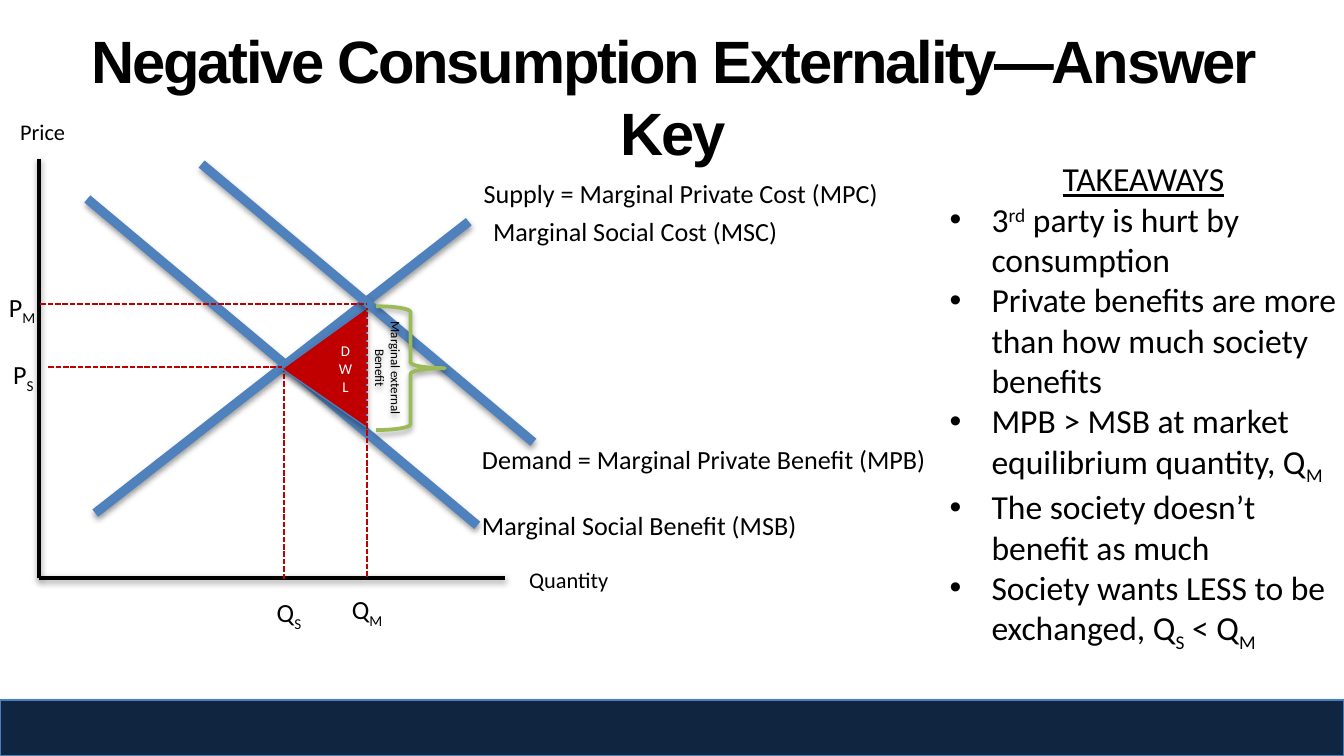
from dataclasses import dataclass

from lxml import etree
from pptx import Presentation
from pptx.dml.color import RGBColor
from pptx.enum.dml import MSO_LINE
from pptx.enum.shapes import MSO_CONNECTOR, MSO_SHAPE
from pptx.enum.text import MSO_ANCHOR, MSO_AUTO_SIZE, PP_ALIGN
from pptx.oxml.ns import qn
from pptx.util import Cm, Pt

STRAIGHT = MSO_CONNECTOR.STRAIGHT
RECT, BRACE = MSO_SHAPE.RECTANGLE, MSO_SHAPE.LEFT_BRACE
WEDGE = MSO_SHAPE.ISOSCELES_TRIANGLE
DASH = MSO_LINE.SQUARE_DOT
CENTER, LEFT = PP_ALIGN.CENTER, PP_ALIGN.LEFT
TOP, MIDDLE = MSO_ANCHOR.TOP, MSO_ANCHOR.MIDDLE
FIT, FIXED = MSO_AUTO_SIZE.SHAPE_TO_FIT_TEXT, MSO_AUTO_SIZE.NONE


@dataclass(frozen=True)
class Theme:
    black: RGBColor = RGBColor(0, 0, 0)
    white: RGBColor = RGBColor(255, 255, 255)
    navy: RGBColor = RGBColor.from_string("10253F")
    edge: RGBColor = RGBColor.from_string("4B7EBC")
    curve: RGBColor = RGBColor.from_string("4F81BD")
    red: RGBColor = RGBColor.from_string("C00000")
    green: RGBColor = RGBColor.from_string("9BBB59")
    head: Pt = Pt(32)
    list: Pt = Pt(18)
    label: Pt = Pt(14)
    axis: Pt = Pt(12)
    loss: Pt = Pt(8)
    gap: Pt = Pt(7)
    face: str = "Calibri"
    title: str = "Arial"


T = Theme()
SHIFT = {"_": "-25000", "^": "30000"}

deck = Presentation()
deck.slide_width, deck.slide_height = Cm(25.4), Cm(14.29)
slide = deck.slides.add_slide(deck.slide_layouts[5])
shapes = slide.shapes


def write(par, text, size, color=T.black, align=LEFT, **form):
    """Fill a paragraph; parts split by | are lowered by _ or raised by ^."""
    par.alignment = align
    for part in text.split("|"):
        run = par.add_run()
        run.text = part.lstrip("_^")
        if part[0] in SHIFT:
            run._r.get_or_add_rPr().set("baseline", SHIFT[part[0]])
        run.font.color.rgb = color
        for key, val in ({"name": T.face, "size": size} | form).items():
            setattr(run.font, key, val)


def draw(ends, color, width, dash=False):
    line = shapes.add_connector(STRAIGHT, *map(Cm, ends))
    line.line.color.rgb = color
    line.line.width = Pt(width)
    if dash:
        line.line.dash_style = DASH
        etree.SubElement(line._element.spPr, qn("a:effectLst"))


# Title and footer bar
title = shapes.title
place = {"left": 0.36, "top": 0.33, "width": 24.71, "height": 2.39}
for key, val in place.items():
    setattr(title, key, Cm(val))
frame = title.text_frame
for key, val in {"vertical_anchor": TOP, "auto_size": FIXED, "word_wrap": True}.items():
    setattr(frame, key, val)
write(frame.paragraphs[0], "Negative Consumption Externality—Answer Key",
      T.head, align=CENTER, name=T.title, bold=True)
frame.paragraphs[0].runs[0]._r.get_or_add_rPr().set("spc", "-120")

bar = shapes.add_shape(RECT, 0, Cm(13.23), deck.slide_width, Cm(1.06))
bar.fill.solid()
bar.fill.fore_color.rgb = T.navy
bar.line.color.rgb = T.edge
bar.line.width = Pt(0.75)

# Axes, shared cost curve, social benefit and its guides
for ends in ((0.74, 10.92, 9.55, 10.92), (0.74, 3, 0.74, 10.92)):
    draw(ends, T.black, 2)
for ends in ((1.65, 3.76, 9.02, 9.93), (8.86, 4.19, 1.8, 9.7)):
    draw(ends, T.curve, 5)
for ends in ((0.91, 6.93, 5.33, 6.93), (5.36, 10.95, 5.36, 6.96)):
    draw(ends, T.red, 1, dash=True)

# Deadweight loss
loss = shapes.add_shape(WEDGE, Cm(5), Cm(6.15), Cm(2.26), Cm(1.6))
loss.rotation = 270
loss.adjustments[0] = 0.49
loss.fill.solid()
loss.fill.fore_color.rgb = T.red
loss.line.color.rgb = T.edge
loss.line.width = Pt(0.75)

# Private benefit and its guides
draw((3.81, 3.1, 10.08, 8.36), T.curve, 5)
for ends in ((0.76, 5.74, 6.93, 5.74), (6.93, 10.9, 6.93, 5.82)):
    draw(ends, T.red, 1, dash=True)

# Labels
labels = (
    ("Price", 0.13, 2.11, 1.37, T.axis),
    ("Quantity", 9.75, 10.57, 2.03, T.axis),
    ("P|_M", -0.08, 5.38, 1.07, T.label),
    ("P|_S", 0, 6.65, 0.91, T.label),
    ("Q|_S", 4.98, 11.15, 0.99, T.label),
    ("Q|_M", 6.4, 11.1, 1.14, T.label),
    ("Supply = Marginal Private Cost (MPC)", 8.89, 3.23, 8.05, T.label),
    ("Marginal Social Cost (MSC)", 9.07, 3.94, 5.94, T.label),
    ("Demand = Marginal Private Benefit (MPB)", 8.86, 8.26, 8.99, T.label),
    ("Marginal Social Benefit (MSB)", 8.86, 9.5, 6.53, T.label),
)
for text, left, top, width, size in labels:
    high = 0.76 if size == T.axis else 0.86
    frame = shapes.add_textbox(Cm(left), Cm(top), Cm(width), Cm(high)).text_frame
    frame.word_wrap = False
    frame.auto_size = FIT
    write(frame.paragraphs[0], text, size)

# Takeaways
points = (
    "3|^rd| party is hurt by consumption",
    "Private benefits are more than how much society benefits",
    "MPB > MSB at market equilibrium quantity, Q|_M",
    "The society doesn’t benefit as much",
    "Society wants LESS to be exchanged, Q|_S| < Q|_M",
)
frame = shapes.add_textbox(Cm(17.7), Cm(2.87), Cm(7.82), Cm(11.02)).text_frame
frame.word_wrap = True
frame.auto_size = FIT
write(frame.paragraphs[0], "TAKEAWAYS", T.list, align=CENTER, underline=True)
for text in points:
    par = frame.add_paragraph()
    props = par._p.get_or_add_pPr()
    props.set("marL", str(Cm(0.79)))
    props.set("indent", str(-Cm(0.79)))
    etree.SubElement(props, qn("a:buFont"), typeface="Arial")
    etree.SubElement(props, qn("a:buChar"), char="•")
    write(par, text, T.list)

# Marginal external benefit
brace = shapes.add_shape(BRACE, Cm(7.11), Cm(5.79), Cm(1.3), Cm(2.34))
brace._element.spPr.find(qn("a:xfrm")).set("flipH", "1")
brace.fill.background()
brace.line.color.rgb = T.green
brace.line.width = Pt(2)

for shape, text, size, color in (
    (loss, "DWL", T.loss, T.white),
    (brace, "Marginal external Benefit", T.gap, T.black),
):
    frame = shape.text_frame
    frame.vertical_anchor = MIDDLE
    frame.word_wrap = True
    frame._txBody.bodyPr.set("vert", "vert")
    write(frame.paragraphs[0], text, size, color, CENTER)

deck.save("out.pptx")
